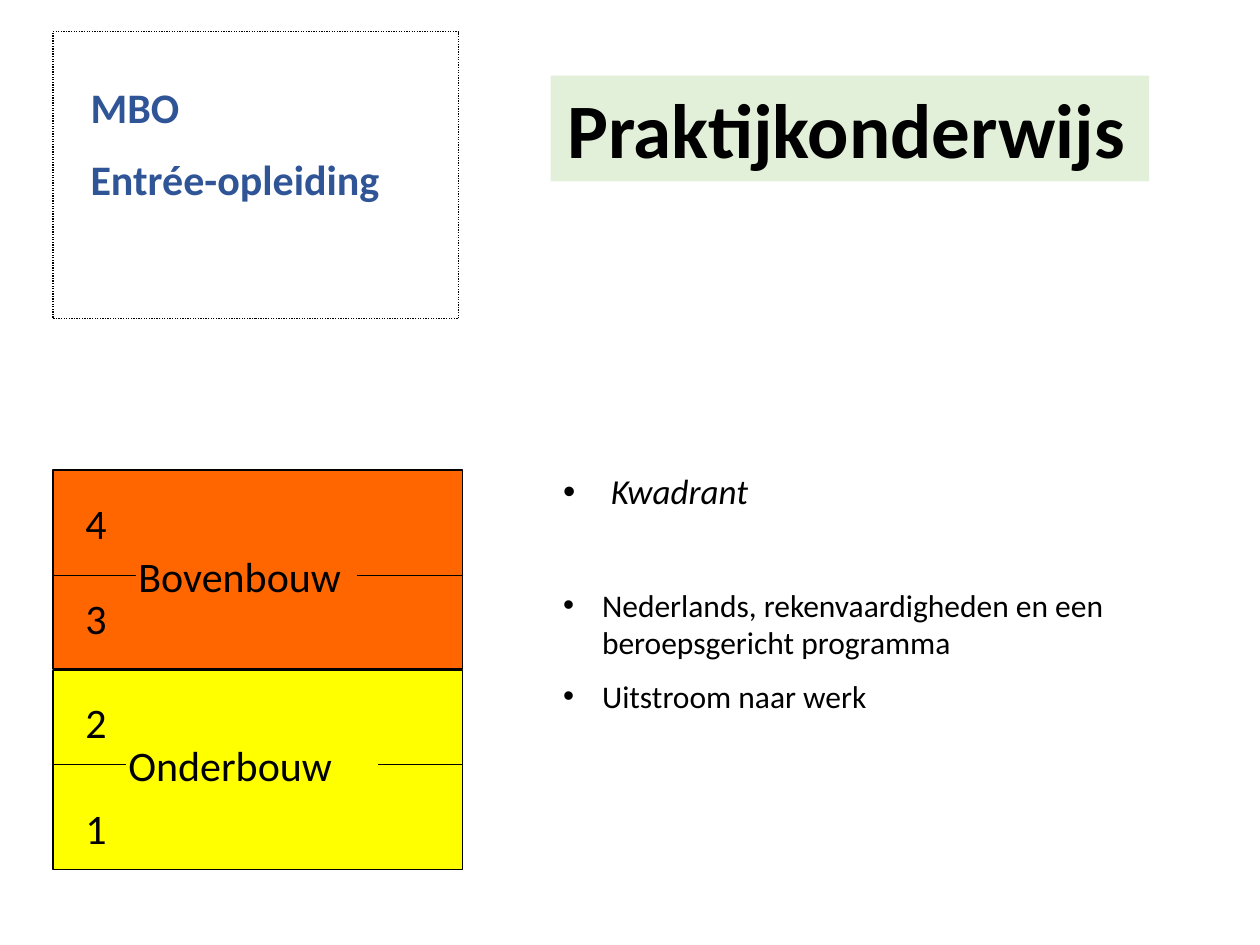
from dataclasses import dataclass

from lxml import etree
from pptx import Presentation
from pptx import util as u
from pptx.dml.color import RGBColor
from pptx.enum import dml, shapes, text
from pptx.oxml.ns import qn


@dataclass(frozen=True)
class Theme:
    font: str = "Calibri"
    black: str = "000000"
    blue: str = "2F5597"
    yellow: str = "FFFF00"
    orange: str = "FF6600"
    green: str = "E2F0D9"
    title: int = 44
    label: int = 24
    topic: int = 20
    body: int = 18
    line: float = 0.75


class SlideBuilder:
    def __init__(self, slide, theme):
        self.slide = slide
        self.theme = theme

    def style(self, paragraph, size, color=None, bold=False, italic=False):
        for run in paragraph.runs:
            font = run.font
            font.name, font.size = self.theme.font, u.Pt(size)
            font.bold, font.italic = bold, italic
            font.color.rgb = RGBColor.from_string(color or self.theme.black)

    def outline(self, line):
        line.color.rgb = RGBColor.from_string(self.theme.black)
        line.width = u.Pt(self.theme.line)

    def box(self, left, top, width, height, fill=None, outlined=True):
        shape = self.slide.shapes.add_shape(
            shapes.MSO_SHAPE.RECTANGLE, *map(u.Inches, (left, top, width, height)))
        shape.shadow.inherit = False
        if fill:
            shape.fill.solid()
            shape.fill.fore_color.rgb = RGBColor.from_string(fill)
        else:
            shape.fill.background()
        if outlined:
            self.outline(shape.line)
        else:
            shape.line.fill.background()
        return shape

    def line(self, start, end, y):
        connector = self.slide.shapes.add_connector(
            shapes.MSO_CONNECTOR.STRAIGHT, *map(u.Inches, (start, y, end, y)))
        self.outline(connector.line)
        etree.SubElement(connector._element.spPr, qn("a:effectLst"))

    def text(self, left, top, width, height, words, size, color=None, bold=False):
        shape = self.slide.shapes.add_textbox(*map(u.Inches, (left, top, width, height)))
        frame = shape.text_frame
        frame.word_wrap = True
        frame.text = words
        for index, paragraph in enumerate(frame.paragraphs):
            paragraph.space_before = u.Pt(size / 2 if index else 0)
            self.style(paragraph, size, color, bold)
        return frame

    def bullet(self, paragraph, indent):
        properties = paragraph._p.get_or_add_pPr()
        properties.set("marL", str(u.Inches(indent)))
        properties.set("indent", str(-u.Inches(indent)))
        font = etree.SubElement(properties, qn("a:buFont"))
        font.set("typeface", "Arial")
        etree.SubElement(properties, qn("a:buChar")).set("char", "•")


def main():
    presentation = Presentation()
    presentation.slide_width, presentation.slide_height = u.Inches(10), u.Inches(7.5)
    theme = Theme()
    slide = SlideBuilder(
        presentation.slides.add_slide(presentation.slide_layouts[6]), theme)

    # Programme description
    frame = slide.text(
        4.37, 2.72, 4.75, 3.62,
        "Kwadrant\n"
        "Nederlands, rekenvaardigheden en een beroepsgericht programma\n"
        "Uitstroom naar werk", theme.body)
    frame.margin_top = u.Inches(1.01)
    topic, subjects, outflow = frame.paragraphs
    slide.style(topic, theme.topic, italic=True)
    subjects.space_before = u.Pt(42)
    for paragraph, indent in ((topic, 0.38), (subjects, 0.31), (outflow, 0.31)):
        slide.bullet(paragraph, indent)

    # Follow-on education
    slide.text(0.62, 0.6, 3.05, 1.11, "MBO\nEntrée-opleiding",
               theme.label, theme.blue, bold=True)
    frame_box = slide.box(0.42, 0.25, 3.22, 2.28)
    frame_box.line.dash_style = dml.MSO_LINE.ROUND_DOT

    # School phases: block top, colour, divider y, divider gap, name and its place
    left, width, height = 0.42, 3.25, 1.58
    phases = (
        (5.32, theme.yellow, 6.07, (1, 3), "Onderbouw", (0.92, 5.82)),
        (3.73, theme.orange, 4.57, (1.08, 2.83), "Bovenbouw", (1, 4.32)),
    )
    for top, fill, divider, (gap_start, gap_end), name, place in phases:
        slide.box(left, top, width, height, fill)
        slide.line(left, gap_start, divider)
        slide.line(gap_end, left + width, divider)
        slide.text(*place, 2.42, 0.5, name, theme.label)

    # School years
    for year, top in (("2", 5.48), ("1", 6.32), ("4", 3.9), ("3", 4.65)):
        slide.text(0.58, top, 0.42, 0.5, year, theme.label)

    # Title
    title = slide.box(4.37, 0.6, 4.75, 0.84, theme.green, outlined=False)
    title.text_frame.text = "Praktijkonderwijs"
    title.text_frame.vertical_anchor = text.MSO_ANCHOR.TOP
    paragraph = title.text_frame.paragraphs[0]
    paragraph.alignment = text.PP_ALIGN.CENTER
    paragraph.add_run().text = " "
    slide.style(paragraph, theme.title, bold=True)
    paragraph.runs[1].font.size = u.Pt(theme.body)

    presentation.save("out.pptx")


if __name__ == "__main__":
    main()
